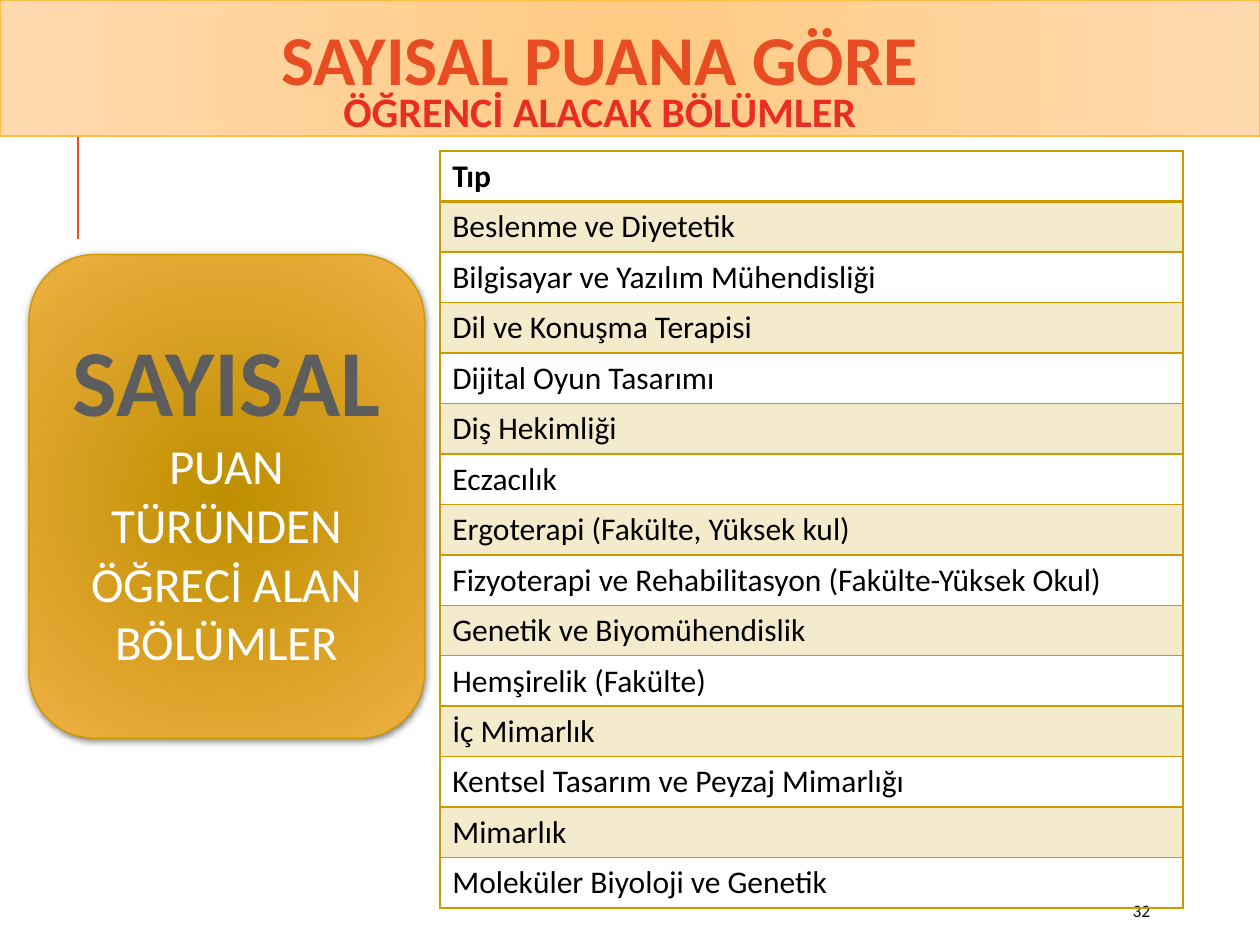
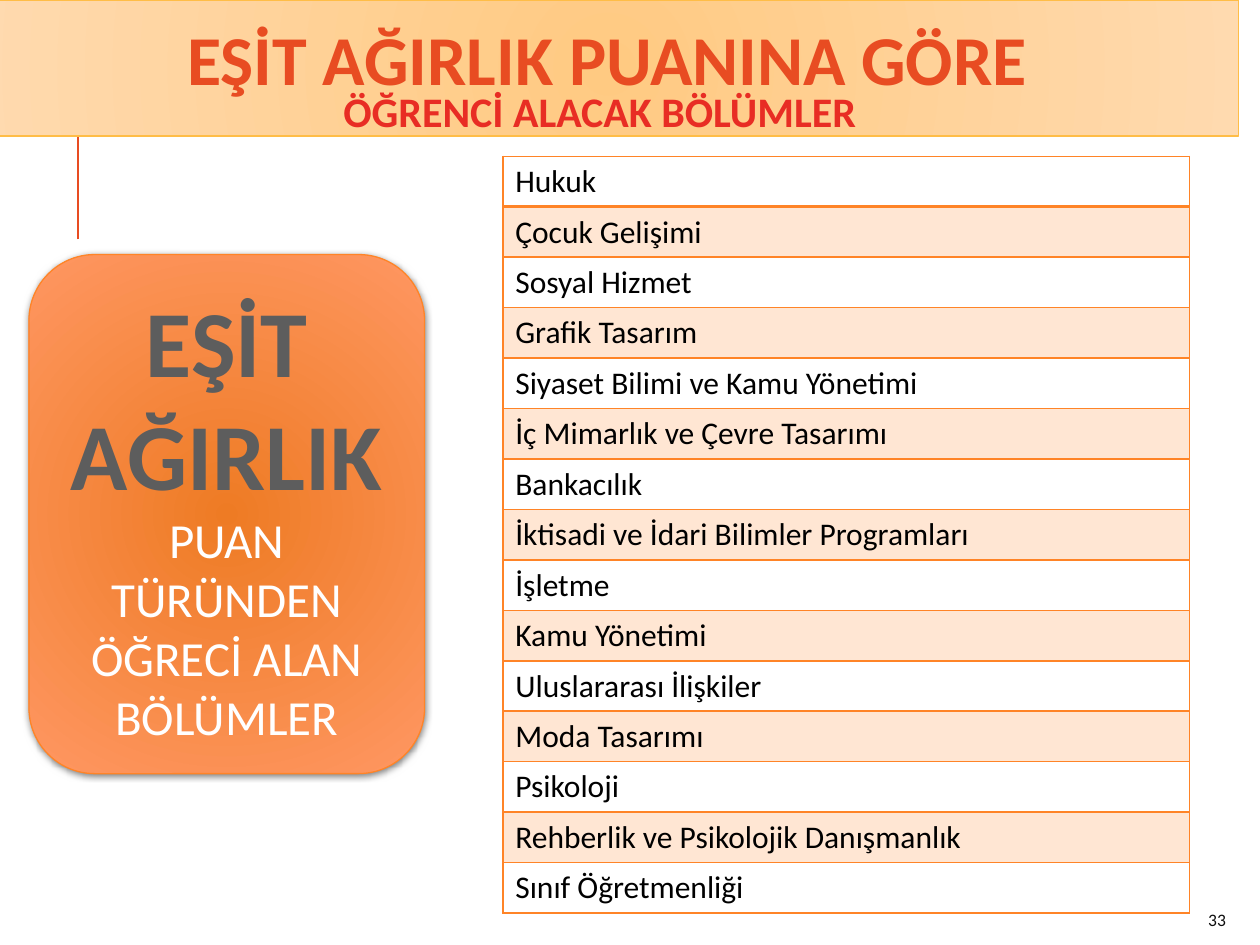
from lxml import etree
from pptx import Presentation
from pptx import oxml
from pptx.dml import color
from pptx.enum import shapes, text
from pptx.oxml import ns
from pptx.util import Inches, Pt

ACCENT = "E84C22"
SUBTITLE_RED = "E82D24"
BAND = {"inner": "FFCA82", "outer": "FFDAAF", "line": "FFBD47"}
KEYWORD_GRAY = "5D5D5D"
NUMBER_GRAY = "0D0D0D"
FONT = "Calibri"
ROW_HEIGHT = 0.4
PANEL_TEXT = " PUAN TÜRÜNDEN ÖĞRECİ ALAN BÖLÜMLER"
SUBTITLE = "ÖĞRENCİ ALACAK BÖLÜMLER"

SLIDES = [
    {
        "title": "SAYISAL PUANA GÖRE ",
        "band_left": 0,
        "keyword": "SAYISAL",
        "panel_height": 3.84,
        "panel": {"inner": "BE8F00", "outer": "EFAF41", "line": "CC9900"},
        "number": "32",
        "number_box": (8.89, 7.08, 0.8, 0.3),
        "table_box": (3.49, 1.2, 5.9),
        "first_bold": True,
        "departments": [
            "Tıp",
            "Beslenme ve Diyetetik",
            "Bilgisayar ve Yazılım Mühendisliği",
            "Dil ve Konuşma Terapisi",
            "Dijital Oyun Tasarımı",
            "Diş Hekimliği",
            "Eczacılık",
            "Ergoterapi (Fakülte, Yüksek kul)",
            "Fizyoterapi ve Rehabilitasyon (Fakülte-Yüksek Okul)",
            "Genetik ve Biyomühendislik",
            "Hemşirelik (Fakülte)",
            "İç Mimarlık",
            "Kentsel Tasarım ve Peyzaj Mimarlığı",
            "Mimarlık",
            "Moleküler Biyoloji ve Genetik",
        ],
    },
    {
        "title": "EŞİT AĞIRLIK PUANINA GÖRE",
        "band_left": -0.17,
        "keyword": "EŞİT AĞIRLIK",
        "panel_height": 4.12,
        "panel": {"inner": "EE7B24", "outer": "FF9762", "line": "FF8427"},
        "number": "33",
        "number_box": (9.49, 7.1, 0.35, 0.4),
        "table_box": (3.99, 1.24, 5.45),
        "first_bold": False,
        "departments": [
            "Hukuk",
            "Çocuk Gelişimi",
            "Sosyal Hizmet",
            "Grafik Tasarım",
            "Siyaset Bilimi ve Kamu Yönetimi",
            "İç Mimarlık ve Çevre Tasarımı",
            "Bankacılık",
            "İktisadi ve İdari Bilimler Programları",
            "İşletme",
            "Kamu Yönetimi",
            "Uluslararası İlişkiler",
            "Moda Tasarımı",
            "Psikoloji",
            "Rehberlik ve Psikolojik Danışmanlık",
            "Sınıf Öğretmenliği",
        ],
    },
]


def rgb(value):
    return color.RGBColor.from_string(value)


def inches(box):
    return [Inches(length) for length in box]


def add_run(paragraph, words, fill, **font_format):
    run = paragraph.add_run()
    run.text = words
    for name, value in {"name": FONT, **font_format}.items():
        setattr(run.font, name, value)
    run.font.color.rgb = rgb(fill)


def add_label(slide, box, words, fill, align, anchor, **font_format):
    frame = slide.shapes.add_textbox(*inches(box)).text_frame
    frame.word_wrap = True
    frame.vertical_anchor = anchor
    paragraph = frame.paragraphs[0]
    paragraph.alignment = align
    add_run(paragraph, words, fill, **font_format)


def add_radial_shape(slide, kind, box, colors):
    """Add a preset shape with a circular gradient and a thin outline."""
    shape = slide.shapes.add_shape(kind, *inches(box))
    shape.shadow.inherit = False
    shape.fill.solid()
    solid = shape.element.spPr.find(ns.qn("a:solidFill"))
    gradient = oxml.parse_xml(
        f'<a:gradFill {ns.nsdecls("a")} rotWithShape="1"><a:gsLst>'
        f'<a:gs pos="0"><a:srgbClr val="{colors["inner"]}"/></a:gs>'
        f'<a:gs pos="100000"><a:srgbClr val="{colors["outer"]}"/></a:gs></a:gsLst>'
        '<a:path path="circle"><a:fillToRect l="100000" t="100000" '
        'r="100000" b="100000"/></a:path></a:gradFill>')
    shape.element.spPr.replace(solid, gradient)
    shape.line.color.rgb = rgb(colors["line"])
    shape.line.width = Pt(0.75)
    return shape


def add_soft_shadow(shape):
    effects = shape.element.spPr.find(ns.qn("a:effectLst"))
    effects.append(oxml.parse_xml(
        f'<a:outerShdw {ns.nsdecls("a")} blurRad="{Pt(4)}" dist="{Pt(1)}" '
        'dir="5400000" rotWithShape="0"><a:srgbClr val="000000">'
        '<a:alpha val="50000"/></a:srgbClr></a:outerShdw>'))


def add_accent_line(slide):
    line = slide.shapes.add_connector(
        shapes.MSO_CONNECTOR.STRAIGHT, *inches((0.62, 1.9, 0.62, 0.9)))
    line.line.color.rgb = rgb(ACCENT)
    line.line.width = Pt(1.5)
    etree.SubElement(line.element.spPr, ns.qn("a:effectLst"))


def add_score_panel(slide, box, keyword, colors):
    panel = add_radial_shape(
        slide, shapes.MSO_SHAPE.ROUNDED_RECTANGLE, box, colors)
    add_soft_shadow(panel)
    panel.text_frame.word_wrap = True
    panel.text_frame.vertical_anchor = text.MSO_ANCHOR.MIDDLE
    paragraph = panel.text_frame.paragraphs[0]
    paragraph.alignment = text.PP_ALIGN.CENTER
    add_run(paragraph, keyword, KEYWORD_GRAY, size=Pt(54), bold=True)
    add_run(paragraph, PANEL_TEXT, "FFFFFF", size=Pt(28), bold=False)


def add_header(slide, band_left, title):
    add_radial_shape(slide, shapes.MSO_SHAPE.RECTANGLE,
                     (band_left, 0, 10, 1.08), BAND)
    for box, words, fill, size in (
            ((-0.18, 0.07, 10, 1.18), title, ACCENT, 40),
            ((0.27, 0.63, 8.98, 0.5), SUBTITLE, SUBTITLE_RED, 24)):
        add_label(slide, box, words, fill, text.PP_ALIGN.CENTER,
                  text.MSO_ANCHOR.TOP, size=Pt(size), bold=True)


def set_borders(cell, line_color, widths):
    properties = cell._tc.get_or_add_tcPr()
    for side, width in widths.items():
        properties.append(oxml.parse_xml(
            f'<a:ln{side} {ns.nsdecls("a")} w="{Pt(width)}"><a:solidFill>'
            f'<a:srgbClr val="{line_color}"/></a:solidFill></a:ln{side}>'))


def tint_cell(cell, fill):
    cell.fill.solid()
    cell.fill.fore_color.rgb = rgb(fill)
    fill_color = cell._tc.tcPr.find(f'{ns.qn("a:solidFill")}/{ns.qn("a:srgbClr")}')
    etree.SubElement(fill_color, ns.qn("a:alpha"), val="20000")


def add_department_table(slide, box, departments, line_color, first_bold):
    left, top, width = box
    count = len(departments)
    table = slide.shapes.add_table(
        count, 1, *inches((left, top, width, count * ROW_HEIGHT))).table
    table.first_row = table.horz_banding = False
    for index, department in enumerate(departments):
        table.rows[index].height = Inches(ROW_HEIGHT)
        cell = table.cell(index, 0)
        add_run(cell.text_frame.paragraphs[0], department, "000000",
                size=Pt(18), bold=first_bold and index == 0)
        set_borders(cell, line_color, {
            "L": 1, "R": 1,
            "T": 2 if index == 1 else 1,
            "B": 2 if index == 0 else 1})
        if index % 2:
            tint_cell(cell, line_color)
        else:
            cell.fill.background()


def add_score_slide(presentation, content):
    slide = presentation.slides.add_slide(presentation.slide_layouts[6])
    add_accent_line(slide)
    add_score_panel(slide, (0.23, 2.02, 3.14, content["panel_height"]),
                    content["keyword"], content["panel"])
    add_header(slide, content["band_left"], content["title"])
    add_label(slide, content["number_box"], content["number"], NUMBER_GRAY,
              text.PP_ALIGN.LEFT, text.MSO_ANCHOR.MIDDLE, size=Pt(10))
    add_department_table(slide, content["table_box"], content["departments"],
                         content["panel"]["line"], content["first_bold"])


def main():
    presentation = Presentation()
    presentation.slide_width = Inches(10)
    presentation.slide_height = Inches(7.5)
    for content in SLIDES:
        add_score_slide(presentation, content)
    presentation.save("out.pptx")


if __name__ == "__main__":
    main()
